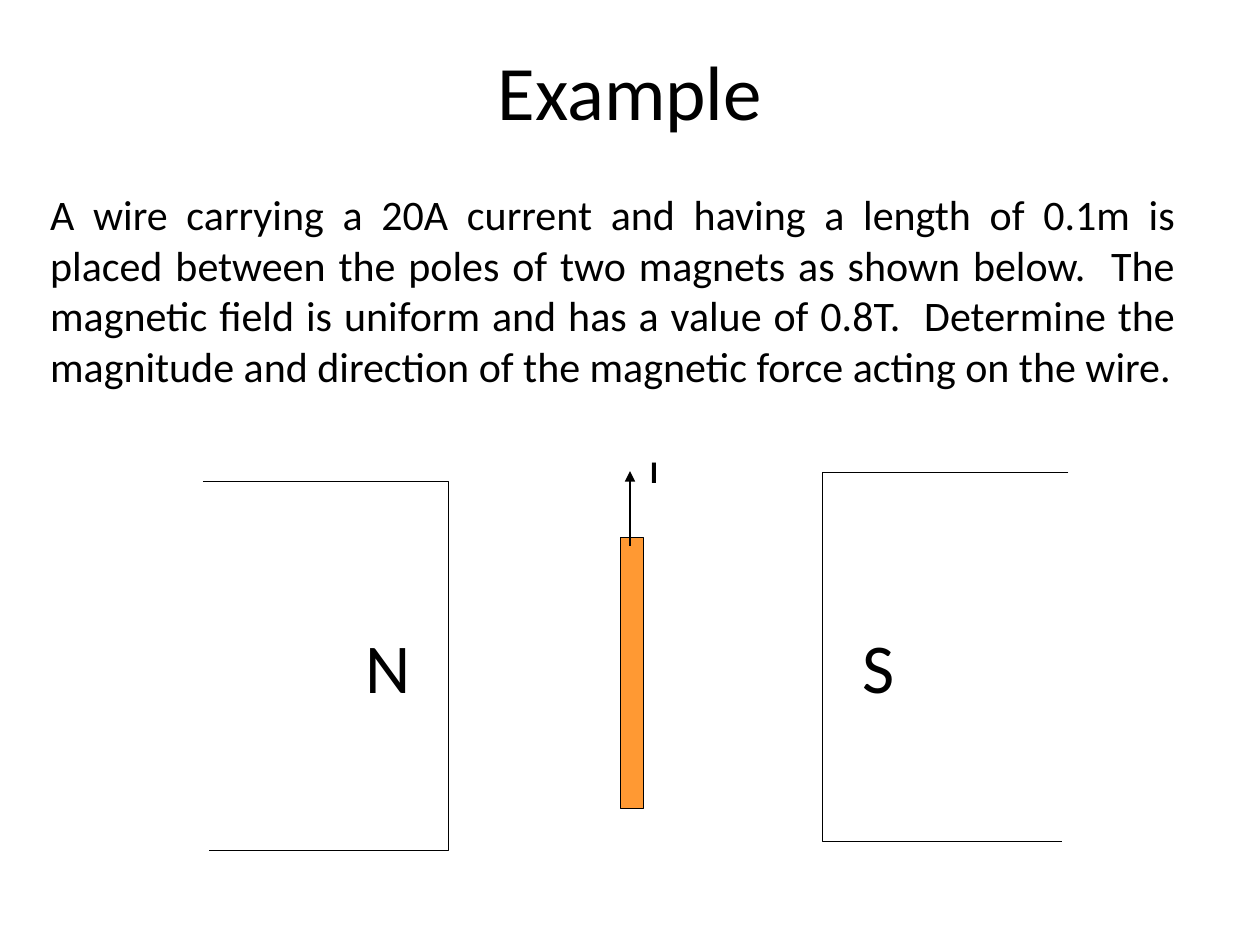
from pptx import Presentation
from pptx.dml.color import RGBColor
from pptx.enum.shapes import MSO_CONNECTOR, MSO_SHAPE
from pptx.enum.text import PP_ALIGN
from pptx.oxml.ns import qn
from pptx.util import Inches, Pt
from lxml.etree import SubElement

COLORS = {"ink": "000000", "wire": "FF9933"}
INK = RGBColor.from_string(COLORS["ink"])

deck = Presentation()
deck.slide_width, deck.slide_height = Inches(10), Inches(7.5)
slide = deck.slides.add_slide(deck.slide_layouts[6])
shapes = slide.shapes


def add_text(words, box, size, align=PP_ALIGN.LEFT, bold=False):
    frame = shapes.add_textbox(*map(Inches, box)).text_frame
    frame.word_wrap = True
    para = frame.paragraphs[0]
    para.alignment = align
    run = para.add_run()
    run.text = words
    font = run.font
    font.name, font.size, font.bold = "Calibri", Pt(size), bold
    font.color.rgb = INK


def set_line(shape):
    shape.line.color.rgb = INK
    shape.line.width = Pt(0.75)


# Problem statement
add_text(
    "A wire carrying a 20A current and having a length of 0.1m is placed "
    "between the poles of two magnets as shown below.  The magnetic field is "
    "uniform and has a value of 0.8T.  Determine the magnitude and direction "
    "of the magnetic force acting on the wire.",
    (0.3, 1.45, 9.13, 1.72), 24, PP_ALIGN.JUSTIFY)

# Magnets: open outlines facing each other, each with its pole letter
for pole, left, face, foot, top, label in (
        ("N", 1.61, 3.56, 1.66, 3.82, 2.8),
        ("S", 8.48, 6.53, 8.43, 3.75, 6.75)):
    base = top + 2.93
    path = shapes.build_freeform(Inches(left), Inches(top))
    corners = [(face, top), (face, base), (foot, base)]
    path.add_line_segments([(Inches(x), Inches(y)) for x, y in corners],
                           close=False)
    magnet = path.convert_to_shape()
    magnet.shadow.inherit = False
    magnet.fill.background()
    set_line(magnet)
    add_text(pole, (label, 4.9, 0.75, 0.77), 40)

# Wire
wire = shapes.add_shape(MSO_SHAPE.RECTANGLE, Inches(3.94), Inches(5.25),
                        Inches(2.15), Inches(0.18))
wire.rotation = 270
wire.shadow.inherit = False
wire.fill.solid()
wire.fill.fore_color.rgb = RGBColor.from_string(COLORS["wire"])
set_line(wire)

# Current arrow and its label
arrow = shapes.add_connector(MSO_CONNECTOR.STRAIGHT, Inches(5), Inches(4.33),
                             Inches(5), Inches(3.74))
set_line(arrow)
SubElement(arrow.line._get_or_add_ln(), qn("a:tailEnd"), type="triangle")
SubElement(arrow._element.spPr, qn("a:effectLst"))
add_text("I", (5.06, 3.54, 0.38, 0.4), 18, bold=True)

# Title
add_text("Example", (0.5, 0.3, 9, 1.25), 44, PP_ALIGN.CENTER)

deck.save("out.pptx")
